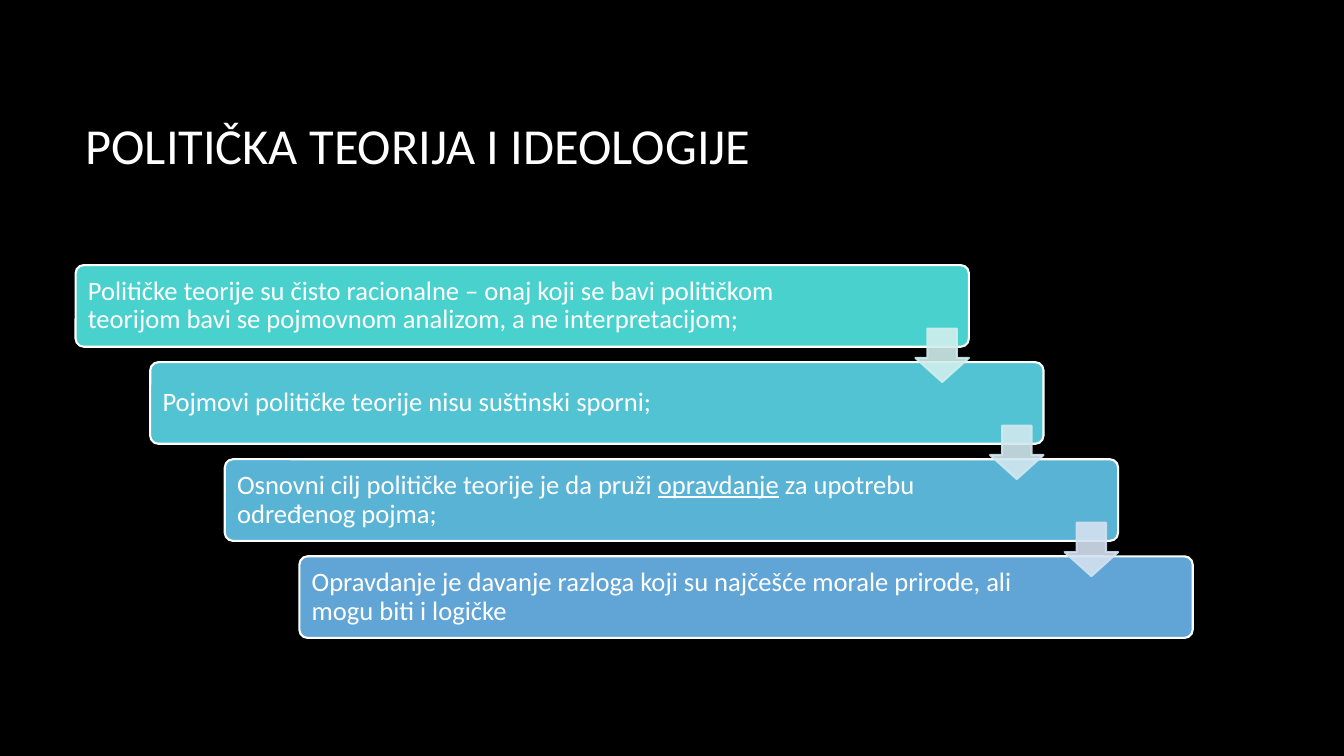
import pptx
import pptx.util
import pptx.dml.color
import pptx.enum.shapes
import pptx.enum.text
import pptx.oxml.ns
import lxml.etree

Inches = pptx.util.Inches
Pt = pptx.util.Pt
RGBColor = pptx.dml.color.RGBColor
Shape = pptx.enum.shapes.MSO_SHAPE

TITLE = "POLITIČKA TEORIJA I IDEOLOGIJE"
STEPS = [
    (RGBColor(0x49, 0xD1, 0xCD), [
        ("Političke teorije su čisto racionalne – onaj koji se bavi političkom "
         "teorijom bavi se pojmovnom analizom, a ne interpretacijom;", False)]),
    (RGBColor(0x51, 0xC3, 0xD3), [
        ("Pojmovi političke teorije nisu suštinski sporni;", False)]),
    (RGBColor(0x59, 0xB3, 0xD4), [
        ("Osnovni cilj političke teorije je da pruži ", False),
        ("opravdanje", True),
        (" za upotrebu određenog pojma;", False)]),
    (RGBColor(0x61, 0xA5, 0xD6), [
        ("Opravdanje je davanje razloga koji su najčešće morale prirode, ali "
         "mogu biti i logičke", False)]),
]
ARROW_COLORS = [
    RGBColor(0xD0, 0xEE, 0xED),
    RGBColor(0xD1, 0xE8, 0xEF),
    RGBColor(0xD3, 0xE1, 0xF0),
]
WHITE = RGBColor(0xFF, 0xFF, 0xFF)
BLACK = RGBColor(0, 0, 0)
FONT = "Calibri"

LEFT, TOP = 0.75, 2.63
STEP_X, STEP_Y = 0.74, 0.963
BAR_WIDTH, BAR_HEIGHT = 8.86, 0.81
ARROW_SIZE = 0.53
ARROW_DROP = 0.63


def add_run(paragraph, text, size, underline=False):
    run = paragraph.add_run()
    run.text = text
    run.font.name = FONT
    run.font.size = Pt(size)
    run.font.color.rgb = WHITE
    if underline:
        run.font.underline = True


def add_filled_shape(slide, kind, box, adjustments, fill, line):
    shape = slide.shapes.add_shape(kind, *[Inches(value) for value in box])
    shape.shadow.inherit = False
    for index, value in enumerate(adjustments):
        shape.adjustments[index] = value
    shape.fill.solid()
    shape.fill.fore_color.rgb = fill
    shape.line.color.rgb = line
    shape.line.width = Pt(1.5)
    return shape


def prepare_frame(frame):
    frame.word_wrap = True
    frame.vertical_anchor = pptx.enum.text.MSO_ANCHOR.MIDDLE
    paragraph = frame.paragraphs[0]
    paragraph.alignment = pptx.enum.text.PP_ALIGN.LEFT
    paragraph.line_spacing = 0.9
    return paragraph


def add_bar(slide, left, top, color, runs):
    bar = add_filled_shape(slide, Shape.ROUNDED_RECTANGLE,
                           (left, top, BAR_WIDTH, BAR_HEIGHT), [0.1], color, WHITE)
    frame = bar.text_frame
    frame.margin_left = Inches(0.1)
    frame.margin_right = Inches(1.38)
    frame.margin_top = frame.margin_bottom = Inches(0.08)
    paragraph = prepare_frame(frame)
    for text, underline in runs:
        add_run(paragraph, text, 19, underline)


def add_arrow(slide, left, top, color):
    arrow = add_filled_shape(slide, Shape.DOWN_ARROW,
                             (left, top, ARROW_SIZE, ARROW_SIZE), [0.55, 0.45], color, color)
    qn = pptx.oxml.ns.qn
    for color_element in arrow.element.spPr.iter(qn("a:srgbClr")):
        lxml.etree.SubElement(color_element, qn("a:alpha")).set("val", "90000")


def main():
    presentation = pptx.Presentation()
    presentation.slide_width = Inches(13.33)
    presentation.slide_height = Inches(7.5)
    slide = presentation.slides.add_slide(presentation.slide_layouts[6])
    slide.background.fill.solid()
    slide.background.fill.fore_color.rgb = BLACK

    title = slide.shapes.add_textbox(Inches(LEFT), Inches(0.67), Inches(11.08), Inches(1.59))
    add_run(prepare_frame(title.text_frame), TITLE, 36)

    corners = [(LEFT + STEP_X * index, TOP + STEP_Y * index) for index in range(len(STEPS))]
    for (left, top), (color, runs) in zip(corners, STEPS):
        add_bar(slide, left, top, color, runs)
    for (left, top), color in zip(corners, ARROW_COLORS):
        add_arrow(slide, left + BAR_WIDTH - ARROW_SIZE, top + ARROW_DROP, color)

    presentation.save("out.pptx")


if __name__ == "__main__":
    main()
